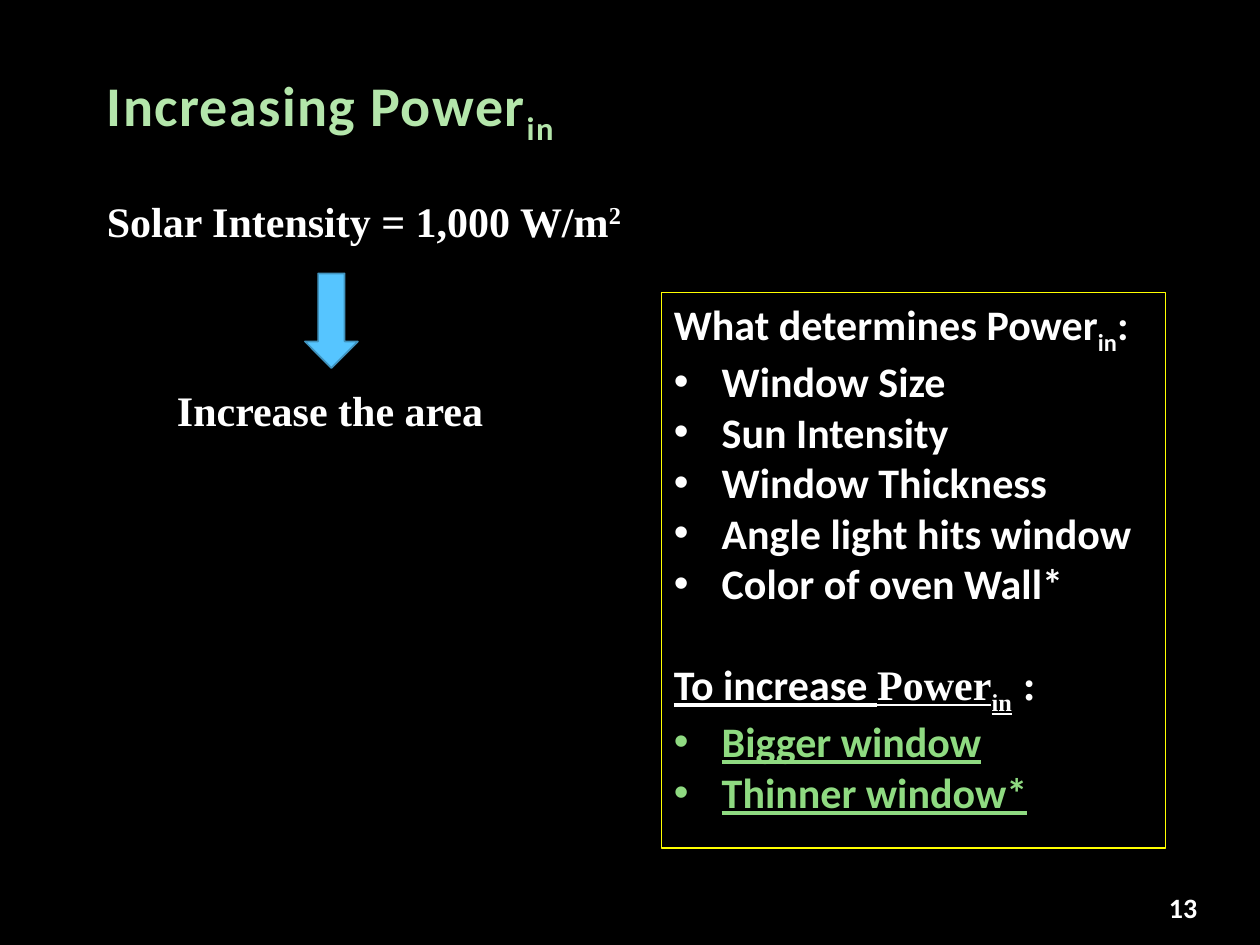
from lxml import etree
from pptx import Presentation
from pptx.dml.color import RGBColor
from pptx.enum.shapes import MSO_SHAPE
from pptx.enum.text import MSO_ANCHOR, PP_ALIGN
from pptx.oxml.ns import qn
from pptx.util import Inches, Pt

LEFT, CENTER, RIGHT = PP_ALIGN.LEFT, PP_ALIGN.CENTER, PP_ALIGN.RIGHT
TOP, MIDDLE, BOTTOM = MSO_ANCHOR.TOP, MSO_ANCHOR.MIDDLE, MSO_ANCHOR.BOTTOM
SANS, SERIF = "Calibri", "Times New Roman"
COLORS = {
    "background": "000000", "text": "FFFFFF", "title": "B4E6AB",
    "answer": "8FDA81", "border": "FFFF00",
    "arrow": "56C5FF", "arrow_line": "4092BD",
}
SUB, SUPER = {"baseline": "-25000"}, {"baseline": "30000"}
SPACED = {"spc": "80"}
UNDERLINE = {"underline": True}
ANSWER = {"color": "answer", **UNDERLINE}
BULLET_INDENT = 0.38

TITLE = [("Increasing Power", {"attrs": SPACED}), ("in", {"attrs": {**SPACED, **SUB}})]
INTENSITY = [("Solar Intensity = 1,000 W/m", {}), ("2", {"attrs": SUPER})]
AREA = [("Increase the area", {})]
PAGE = [("13", {})]
QUESTION = [("What determines Power", {}), ("in", {"attrs": SUB}), (":", {})]
FACTORS = ["Window Size", "Sun Intensity", "Window Thickness",
           "Angle light hits window", "Color of oven Wall*"]
GOAL = [("To increase ", UNDERLINE),
        ("Power", {"name": SERIF, **UNDERLINE}),
        ("in", {"name": SERIF, "attrs": SUB, **UNDERLINE}),
        (" :", {"name": SERIF})]
ANSWERS = ["Bigger window", "Thinner window*"]

LABELS = [
    (TITLE, (0.75, 0.33, 8.5, 0.83), BOTTOM, LEFT, {"size": 32, "color": "title"}),
    (PAGE, (8.91, 7.05, 0.69, 0.3), MIDDLE, RIGHT, {"size": 16}),
    (INTENSITY, (0.75, 1.5, 4.58, 0.5), TOP, LEFT, {"name": SERIF}),
    (AREA, (0.33, 3, 4.58, 0.5), TOP, CENTER, {"name": SERIF}),
]


def rgb(key):
    return RGBColor.from_string(COLORS[key])


def box(at):
    return [Inches(v) for v in at]


def add_runs(p, runs, base):
    for text, changes in runs:
        style = {"name": SANS, "size": 24, "color": "text", "bold": True, **base, **changes}
        r = p.add_run()
        r.text = text
        r.font.color.rgb = rgb(style.pop("color"))
        style["size"] = Pt(style["size"])
        for key, value in style.pop("attrs", {}).items():
            r.font._element.set(key, value)
        for key, value in style.items():
            setattr(r.font, key, value)


def add_bullet(p):
    pPr = p._p.get_or_add_pPr()
    indent = Inches(BULLET_INDENT)
    pPr.set("marL", str(indent))
    pPr.set("indent", str(-indent))
    etree.SubElement(pPr, qn("a:buFont")).set("typeface", "Arial")
    etree.SubElement(pPr, qn("a:buChar")).set("char", "•")


def add_label(s, runs, at, anchor, align, style):
    tf = s.shapes.add_textbox(*box(at)).text_frame
    tf.word_wrap = True
    tf.vertical_anchor = anchor
    p = tf.paragraphs[0]
    p.alignment = align
    if runs is TITLE:
        p.line_spacing = 0.9
    add_runs(p, runs, style)


def add_shape(s, kind, at, line, width):
    sp = s.shapes.add_shape(kind, *box(at))
    sp.shadow.inherit = False
    sp.line.color.rgb = rgb(line)
    sp.line.width = Pt(width)
    return sp


def add_panel(s):
    sp = add_shape(s, MSO_SHAPE.RECTANGLE, (5.25, 2.32, 4, 4.41), "border", 0.75)
    sp.fill.background()
    tf = sp.text_frame
    tf.word_wrap = True
    tf.vertical_anchor = TOP
    rows = [(QUESTION, False)]
    rows += [([(text, {})], True) for text in FACTORS]
    rows += [(GOAL, False)]
    rows += [([(text, ANSWER)], True) for text in ANSWERS]
    for i, (runs, bulleted) in enumerate(rows):
        p = tf.add_paragraph() if i else tf.paragraphs[0]
        p.alignment = LEFT
        if runs is GOAL:
            p.space_before = Pt(29)
        if bulleted:
            add_bullet(p)
        add_runs(p, runs, {})


def main():
    prs = Presentation()
    prs.slide_width, prs.slide_height = Inches(10), Inches(7.5)
    s = prs.slides.add_slide(prs.slide_layouts[6])
    s.background.fill.solid()
    s.background.fill.fore_color.rgb = rgb("background")
    for label in LABELS:
        add_label(s, *label)
    add_panel(s)
    arrow = add_shape(s, MSO_SHAPE.DOWN_ARROW, (2.42, 2.17, 0.42, 0.75), "arrow_line", 1)
    arrow.fill.solid()
    arrow.fill.fore_color.rgb = rgb("arrow")
    prs.save("out.pptx")


if __name__ == "__main__":
    main()
